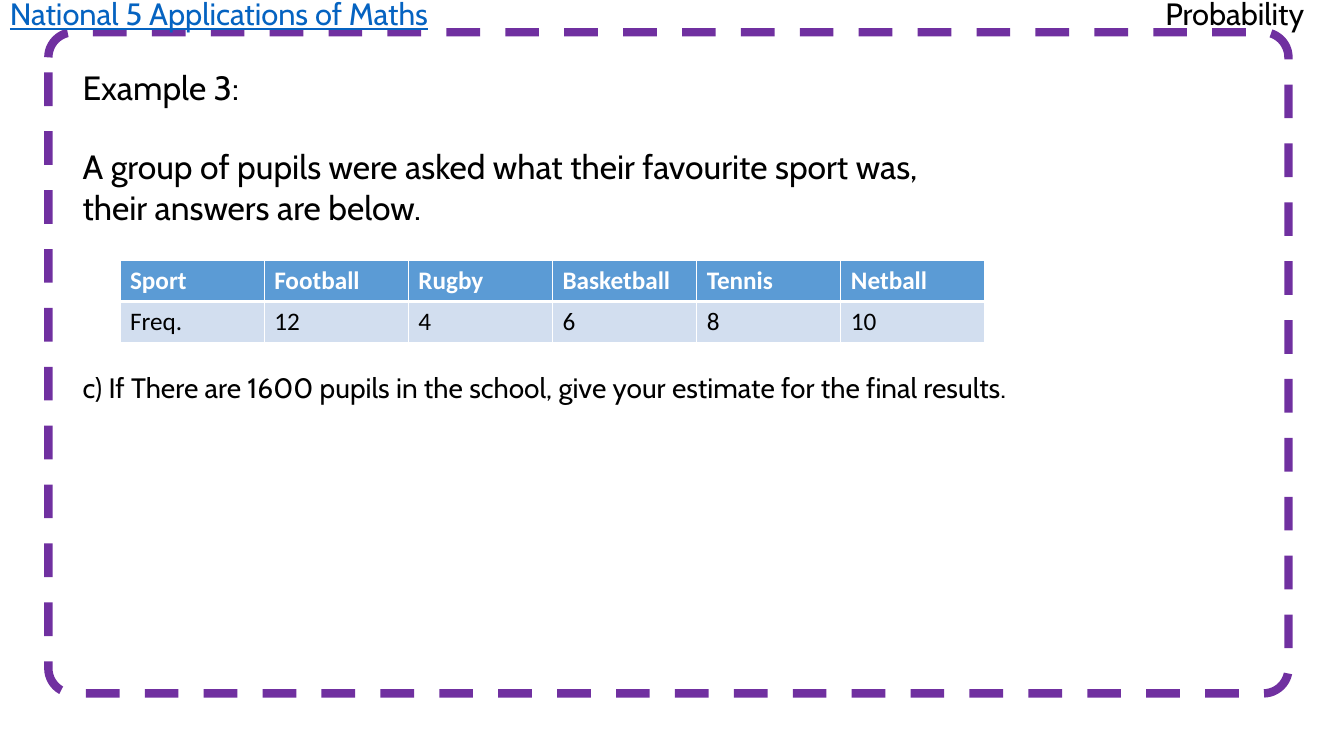
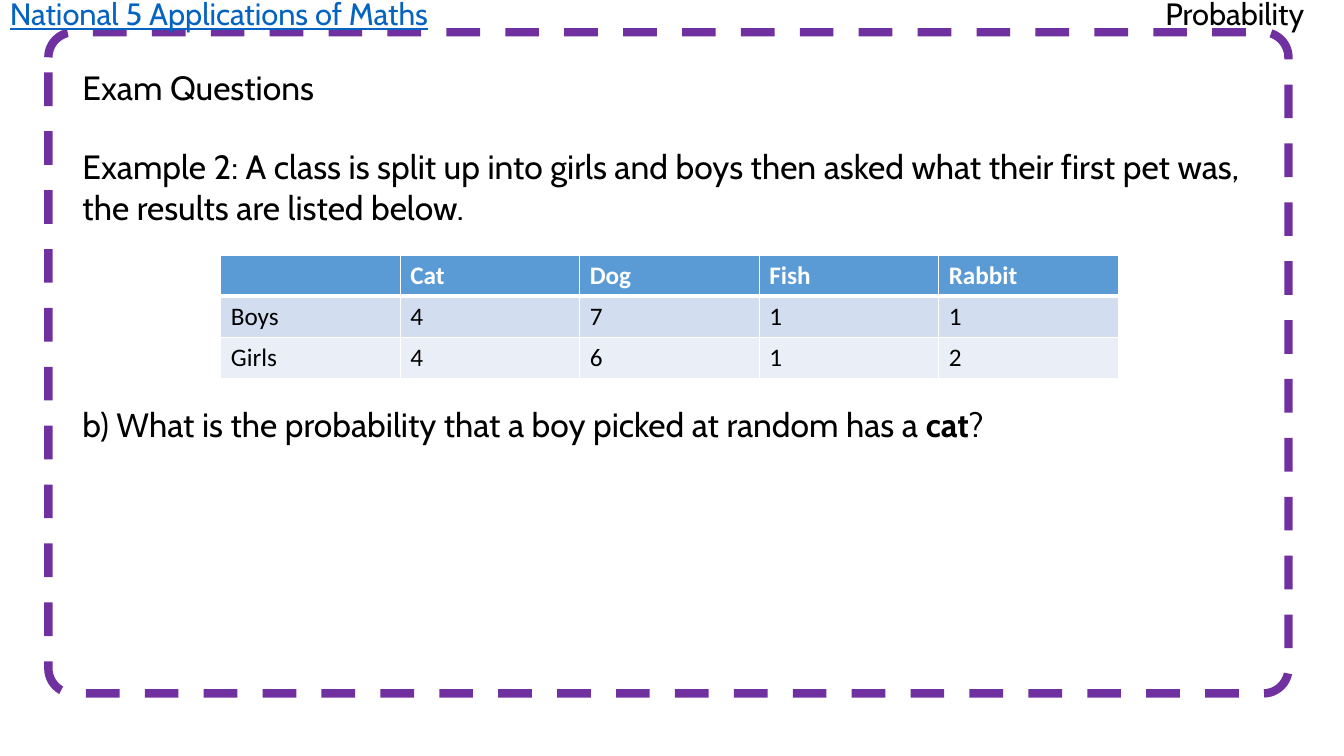
import pptx
import pptx.dml.color
import pptx.enum.dml
import pptx.enum.shapes
import pptx.enum.text
import pptx.util
import lxml.etree
import pptx.oxml.ns

Inches = pptx.util.Inches
Pt = pptx.util.Pt
RGBColor = pptx.dml.color.RGBColor

PURPLE = RGBColor(0x70, 0x30, 0xA0)
LINK_BLUE = RGBColor(0x05, 0x63, 0xC1)
BLACK = RGBColor(0, 0, 0)
WHITE = RGBColor(0xFF, 0xFF, 0xFF)
HEADER_BLUE = RGBColor(0x5B, 0x9B, 0xD5)
BANDS = [RGBColor(0xD2, 0xDE, 0xEF), RGBColor(0xEA, 0xEF, 0xF7)]
TEXT_LEFT = 0.72
ROW_HEIGHT = 0.41


def add_text(slide, left, top, width, height, runs, size=24, color=BLACK, wrap=True):
    box = slide.shapes.add_textbox(Inches(left), Inches(top), Inches(width), Inches(height))
    frame = box.text_frame
    frame.word_wrap = wrap
    frame.auto_size = pptx.enum.text.MSO_AUTO_SIZE.SHAPE_TO_FIT_TEXT
    paragraph = frame.paragraphs[0]
    paragraph.font.name = "Cabin"
    paragraph.font.size = Pt(size)
    paragraph.font.color.rgb = color
    for text, bold in runs:
        run = paragraph.add_run()
        run.text = text
        run.font.name = "Cabin"
        run.font.size = Pt(size)
        run.font.color.rgb = color
        if bold:
            run.font.bold = True
    return paragraph


def style_cell(cell, text, row):
    properties = cell._tc.get_or_add_tcPr()
    for side in ("L", "R", "T", "B"):
        heavy = (row == 0 and side == "B") or (row == 1 and side == "T")
        border = lxml.etree.SubElement(
            properties, pptx.oxml.ns.qn(f"a:ln{side}"), w=str(Pt(3 if heavy else 1)))
        fill = lxml.etree.SubElement(border, pptx.oxml.ns.qn("a:solidFill"))
        lxml.etree.SubElement(fill, pptx.oxml.ns.qn("a:srgbClr"), val=str(WHITE))
    cell.fill.solid()
    cell.fill.fore_color.rgb = BANDS[(row - 1) % 2] if row else HEADER_BLUE
    cell.text = text
    font = cell.text_frame.paragraphs[0].font
    font.name = "Calibri"
    font.size = Pt(18)
    font.bold = row == 0
    font.color.rgb = BLACK if row else WHITE


questions = [
    {
        "title": ("Example 3:", 1.88),
        "intro": ("A group of pupils were asked what their favourite sport was, "
                  "their answers are below.", 9.05),
        "table": (1.19, 2.58, 1.43, [
            ["Sport", "Football", "Rugby", "Basketball", "Tennis", "Netball"],
            ["Freq.", "12", "4", "6", "8", "10"],
        ]),
        "task": (3.63, 9.62, 20, [
            ("c) If There are 1600 pupils in the school, "
             "give your estimate for the final results.", False),
        ]),
    },
    {
        "title": ("Exam Questions", 2.57),
        "intro": ("Example 2: A class is split up into girls and boys then asked what "
                  "their first pet was, the results are listed below.", 11.87),
        "table": (2.19, 2.53, 1.78, [
            ["", "Cat", "Dog", "Fish", "Rabbit"],
            ["Boys", "4", "7", "1", "1"],
            ["Girls", "4", "6", "1", "2"],
        ]),
        "task": (3.96, 11.87, 24, [
            ("b) What is the probability that a boy picked at random has a ", False),
            ("cat", True),
            ("?", False),
        ]),
    },
]

presentation = pptx.Presentation()
presentation.slide_width = Inches(13.33)
presentation.slide_height = Inches(7.5)

for question in questions:
    slide = presentation.slides.add_slide(presentation.slide_layouts[6])

    frame = slide.shapes.add_shape(
        pptx.enum.shapes.MSO_SHAPE.ROUNDED_RECTANGLE,
        Inches(0.48), Inches(0.32), Inches(12.3), Inches(6.56))
    frame.adjustments[0] = 0.038
    frame.shadow.inherit = False
    frame.fill.background()
    frame.line.color.rgb = PURPLE
    frame.line.width = Pt(6)
    frame.line.dash_style = pptx.enum.dml.MSO_LINE.DASH

    add_text(slide, 11.46, -0.1, 1.69, 0.47, [("Probability", False)], 22, wrap=False)
    course = add_text(slide, 0, -0.1, 4.63, 0.47,
                      [("National 5 Applications of Maths", False)], 22, LINK_BLUE, False)
    course.runs[0].font.underline = True

    title, width = question["title"]
    add_text(slide, TEXT_LEFT, 0.61, width, 0.5, [(title, False)], wrap=False)
    intro, width = question["intro"]
    add_text(slide, TEXT_LEFT, 1.4, width, 0.91, [(intro, False)])

    left, top, column_width, rows = question["table"]
    columns = len(rows[0])
    table = slide.shapes.add_table(
        len(rows), columns, Inches(left), Inches(top),
        Inches(column_width * columns), Inches(ROW_HEIGHT * len(rows))).table
    for column in table.columns:
        column.width = Inches(column_width)
    for row, values in enumerate(rows):
        table.rows[row].height = Inches(ROW_HEIGHT)
        for column, value in enumerate(values):
            style_cell(table.cell(row, column), value, row)

    top, width, size, runs = question["task"]
    add_text(slide, TEXT_LEFT, top, width, 0.5, runs, size)

presentation.save("out.pptx")
